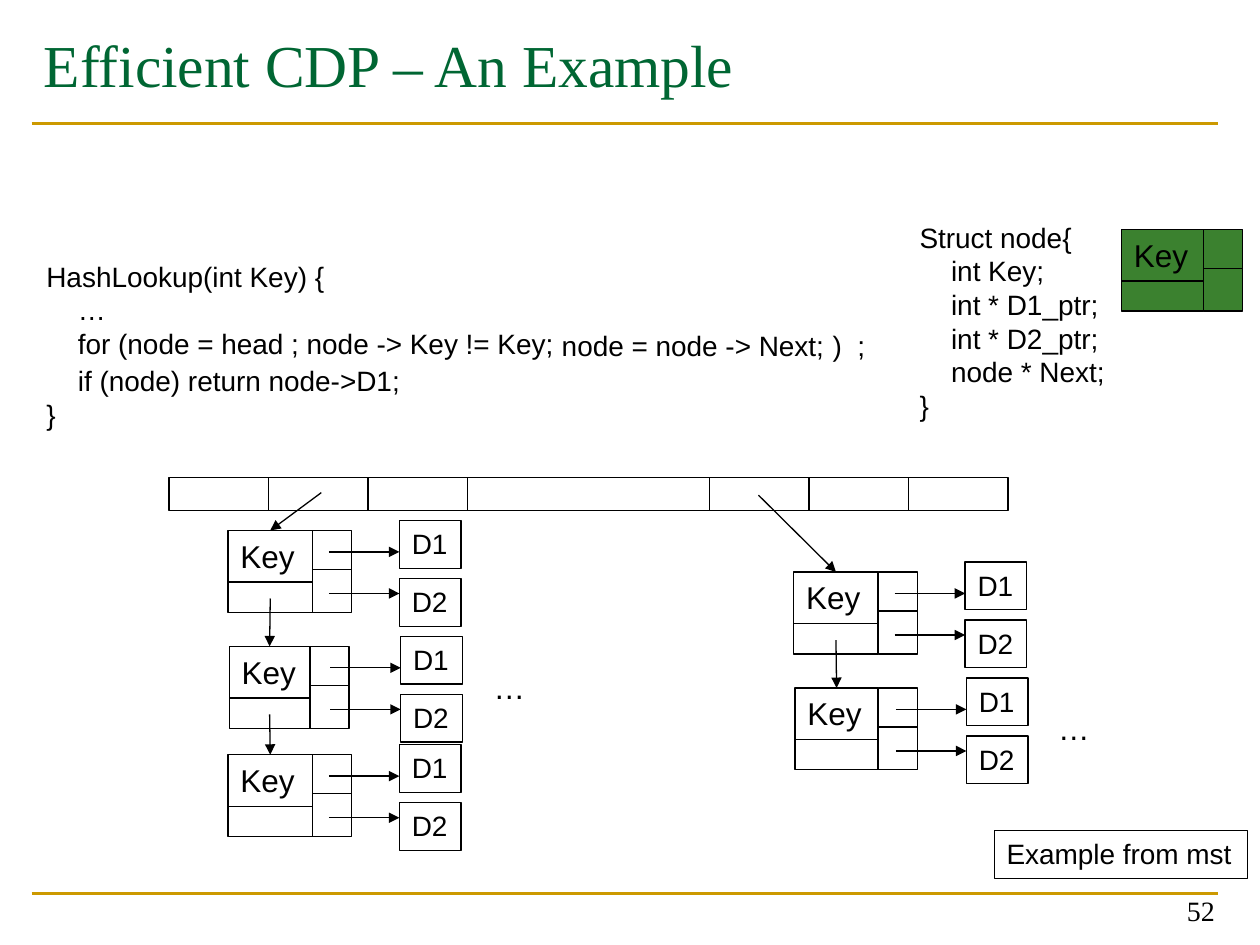
from lxml import etree
from pptx import Presentation
from pptx.dml.color import RGBColor
from pptx.enum.shapes import MSO_CONNECTOR as Connector, MSO_SHAPE as Shape
from pptx.enum.text import MSO_ANCHOR as Anchor, PP_ALIGN as Align
from pptx.oxml.ns import qn
from pptx.util import Inches, Pt

COLORS = {
    "text": "000000",
    "title": "006633",
    "rule": "CC9900",
    "node": "FFFFFF",
    "struct": "3B812F",
}
TOP = 0


class SlideBuilder:
    """Holds the style and the current slide."""

    body_font, heading_font = "Arial", "Times New Roman"

    def __init__(self, slide):
        self.slide = slide

    def color(self, name):
        return RGBColor.from_string(COLORS[name])

    def set_text(self, shape, lines, size, font=None, color="text", indented=(),
                 align=Align.LEFT, anchor=Anchor.TOP):
        frame = shape.text_frame
        frame.word_wrap = True
        frame.vertical_anchor = anchor
        if align == Align.LEFT:
            frame.margin_right = 0
        frame.text = "\n".join(lines)
        for index, paragraph in enumerate(frame.paragraphs):
            paragraph.alignment = align
            if index in indented:
                paragraph._p.get_or_add_pPr().set("marL", str(Inches(0.25)))
            for run in paragraph.runs:
                run.font.size = Pt(size)
                run.font.name = font or self.body_font
                run.font.color.rgb = self.color(color)

    def text(self, left, top, width, height, lines, size=16, **style):
        box = self.slide.shapes.add_textbox(
            Inches(left), Inches(top), Inches(width), Inches(height))
        self.set_text(box, lines, size, **style)

    def box(self, left, top, width, height, label=None, size=16, fill=None):
        shape = self.slide.shapes.add_shape(
            Shape.RECTANGLE, Inches(left), Inches(top), Inches(width), Inches(height))
        shape.shadow.inherit = False
        if fill:
            shape.fill.solid()
            shape.fill.fore_color.rgb = self.color(fill)
        else:
            shape.fill.background()
        shape.line.color.rgb = self.color("text")
        shape.line.width = Pt(0.75)
        if label:
            self.set_text(shape, [label], size)
        return shape

    def line(self, start, end, color="text", width=0.75):
        line = self.slide.shapes.add_connector(
            Connector.STRAIGHT, *(Inches(value) for value in (*start, *end)))
        line.line.color.rgb = self.color(color)
        line.line.width = Pt(width)
        etree.SubElement(line._element.spPr, qn("a:effectLst"))
        return line

    def arrow(self, start, end, target=None):
        arrow = self.line(start, end)
        etree.SubElement(arrow.line._get_or_add_ln(), qn("a:tailEnd"), type="triangle")
        if target:
            arrow.end_connect(target, TOP)

    def node(self, left, top, key_width=0.67, key_fill="node", fill=None):
        """Key over the next pointer, with the two data pointers at the right."""
        key = self.box(left, top, key_width, 0.41, "Key", 18, key_fill)
        self.box(left, top + 0.41, key_width, 0.24, fill=fill)
        self.box(left + key_width, top, 0.31, 0.31, fill=fill)
        self.box(left + key_width, top + 0.31, 0.31, 0.34, fill=fill)
        return key

    def chain(self, head, nodes):
        """Linked list whose first node is reached from the head bucket."""
        start = head
        for left, top, key_width in nodes:
            key = self.node(left, top, key_width)
            middle = left + key_width / 2
            self.arrow(start, (middle, top), key)
            start = (middle, top + 0.54)
            data_left = left + 1.36
            for label, box_offset, arrow_offset in (("D1", -0.08, 0.17), ("D2", 0.38, 0.5)):
                self.box(data_left, top + box_offset, 0.49, 0.38, label)
                self.arrow((left + 0.8, top + arrow_offset),
                           (data_left, top + arrow_offset))


def main():
    presentation = Presentation()
    presentation.slide_width, presentation.slide_height = Inches(10), Inches(7.5)
    builder = SlideBuilder(
        presentation.slides.add_slide(presentation.slide_layouts[6]))

    # Title, rules and page number
    for top in (0.98, 7.09):
        builder.line((0.25, top), (9.67, top), "rule", 1.5)
    builder.text(0.25, 0.17, 9.42, 1.17, ["Efficient CDP – An Example"], 34,
                 font=builder.heading_font, color="title")
    builder.text(7.41, 6.91, 2.33, 0.5, ["52"], font=builder.heading_font,
                 align=Align.RIGHT, anchor=Anchor.BOTTOM)

    # Lookup code
    builder.text(0.27, 2.01, 4.34, 0.9, [
        "HashLookup(int Key) {", "…", "for (node = head ; node -> Key != Key;",
    ], indented=(1, 2))
    builder.text(4.36, 2.56, 2.29, 0.37, ["node = node -> Next;"])
    builder.text(6.51, 2.56, 0.46, 0.37, [")  ;"])
    builder.text(0.27, 2.84, 3.26, 0.64, ["if (node) return node->D1;", "}"],
                 indented=(0,))

    # Node structure
    builder.text(7.2, 1.7, 1.94, 1.7, [
        "Struct node{", "int Key;", "int * D1_ptr;", "int * D2_ptr;",
        "node * Next;", "}",
    ], indented=range(1, 5))
    builder.node(8.9, 1.82, 0.65, "struct", "struct")

    # Hash table buckets
    left = 1.34
    for width in [0.79] * 3 + [1.92] + [0.79] * 3:
        builder.box(left, 3.79, width, 0.26)
        left += width

    # Linked lists
    builder.chain((2.55, 3.91), [
        (1.81, 4.21, 0.67), (1.82, 5.13, 0.64), (1.81, 5.99, 0.67)])
    builder.chain((6.02, 3.93), [(6.3, 4.54, 0.67), (6.31, 5.46, 0.66)])
    for left, top in ((3.82, 5.25), (8.3, 5.58)):
        builder.text(left, top, 0.45, 0.4, ["…"], 18)

    # Benchmark note
    builder.box(7.89, 6.59, 2.01, 0.38, "Example from mst")

    presentation.save("out.pptx")


if __name__ == "__main__":
    main()
